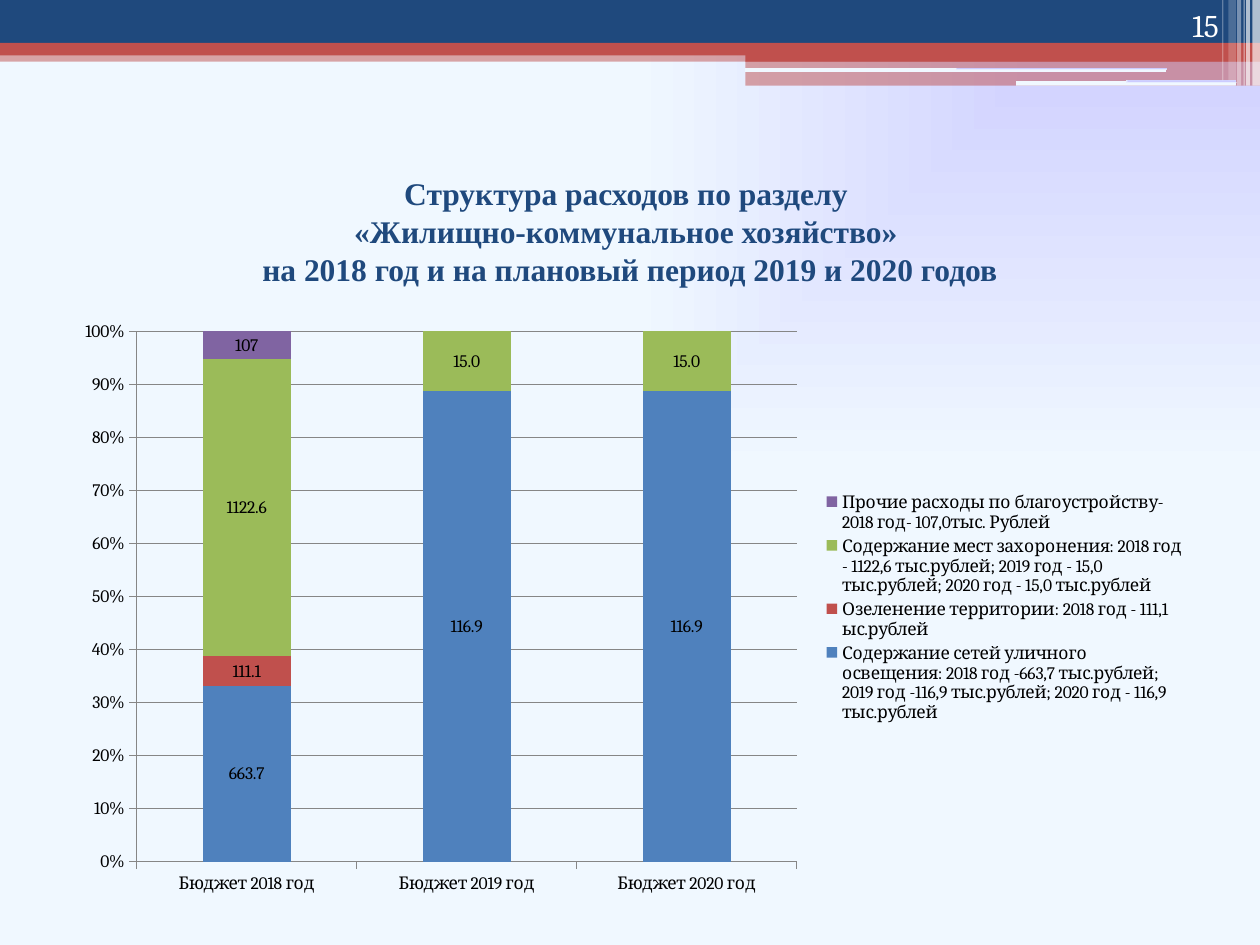
from lxml.etree import SubElement
from pptx import Presentation
from pptx.chart.data import CategoryChartData
from pptx.dml.color import RGBColor
from pptx.enum.chart import XL_CHART_TYPE, XL_LEGEND_POSITION, XL_TICK_MARK
from pptx.enum.shapes import MSO_SHAPE
from pptx.enum.text import MSO_ANCHOR, PP_ALIGN
from pptx.oxml import parse_xml
from pptx.oxml.ns import nsdecls, qn
from pptx.util import Pt

COLORS = {
    "navy": "1F497D", "red": "C0504D", "white": "FFFFFF", "black": "000000",
    "lilac": "CCCCFF", "ice": "F0F8FF", "grid": "868686",
    "blue": "4F81BD", "green": "9BBB59", "purple": "8064A2",
}


def color(name):
    return RGBColor.from_string(COLORS[name])


def place(part, x, y, width, height):
    """Pin a plot area or legend, in fractions of the chart."""
    element = part._element
    for old in element.findall(qn("c:layout")):
        element.remove(old)
    target = '<c:layoutTarget val="inner"/>' if element.tag == qn("c:plotArea") else ""
    layout = parse_xml(
        f'<c:layout {nsdecls("c")}><c:manualLayout>{target}'
        '<c:xMode val="edge"/><c:yMode val="edge"/>'
        f'<c:x val="{x}"/><c:y val="{y}"/><c:w val="{width}"/><c:h val="{height}"/>'
        '</c:manualLayout></c:layout>')
    position = element.find(qn("c:legendPos"))
    if position is None:
        element.insert(0, layout)
    else:
        position.addnext(layout)


class SlideBuilder:
    def __init__(self, page):
        self.page = page
        self.body_font = "Cambria"
        self.title_font = "Times New Roman"

    def gradient(self, fill, owner):
        """Fill with a gradient that spreads from the top right corner."""
        fill.gradient()
        for stop, name in zip(fill.gradient_stops, ("lilac", "ice")):
            stop.color.rgb = color(name)
        grad = next(owner.iter(qn("a:gradFill")))
        grad.remove(grad.find(qn("a:lin")))
        corner = SubElement(grad, qn("a:path"), {"path": "rect"})
        SubElement(corner, qn("a:fillToRect"), {"l": "100000", "b": "100000"})

    def background(self):
        self.gradient(self.page.background.fill, self.page._element)

    def shape(self, kind, left, top, width, height):
        shape = self.page.shapes.add_shape(kind, Pt(left), Pt(top), Pt(width), Pt(height))
        shape.shadow.inherit = False
        shape.line.fill.background()
        return shape

    def band(self, left, top, width, height, fill, opacity=100):
        shape = self.shape(MSO_SHAPE.RECTANGLE, left, top, width, height)
        shape.fill.solid()
        shape.fill.fore_color.rgb = color(fill)
        if opacity < 100:
            value = next(shape._element.spPr.iter(qn("a:srgbClr")))
            SubElement(value, qn("a:alpha"), {"val": str(opacity * 1000)})

    def slot(self, left, top, width, height):
        shape = self.shape(MSO_SHAPE.ROUNDED_RECTANGLE, left, top, width, height)
        self.gradient(shape.fill, shape._element.spPr)

    def text(self, left, top, width, height, words, align, anchor, fill, **font):
        box = self.page.shapes.add_textbox(Pt(left), Pt(top), Pt(width), Pt(height))
        frame = box.text_frame
        frame.word_wrap = True
        frame.vertical_anchor = anchor
        para = frame.paragraphs[0]
        para.text = words
        para.alignment = align
        for span in para.runs:
            for key, value in font.items():
                setattr(span.font, key, value)
            span.font.color.rgb = color(fill)

    def chart(self, left, top, width, height, categories, rows):
        data = CategoryChartData()
        data.categories = categories
        for name, values, _, number_format in rows:
            data.add_series(name, values, number_format)
        chart = self.page.shapes.add_chart(
            XL_CHART_TYPE.COLUMN_STACKED_100,
            Pt(left), Pt(top), Pt(width), Pt(height), data).chart
        chart.has_title = False
        for key, value in {"name": self.body_font, "size": Pt(10)}.items():
            setattr(chart.font, key, value)
        chart.font.color.rgb = color("black")

        # Columns and their labels
        plot = chart.plots[0]
        for key, value in {"gap_width": 150, "overlap": 100,
                           "vary_by_categories": False}.items():
            setattr(plot, key, value)
        for series, (_, _, fill, number_format) in zip(plot.series, rows):
            series.format.fill.solid()
            series.format.fill.fore_color.rgb = color(fill)
            labels = series.data_labels
            for key, value in {"show_value": True, "number_format": number_format,
                               "number_format_is_linked": False}.items():
                setattr(labels, key, value)

        # Axes
        for axis in (chart.category_axis, chart.value_axis):
            axis.major_tick_mark = XL_TICK_MARK.OUTSIDE
            axis.minor_tick_mark = XL_TICK_MARK.NONE
            axis.format.line.color.rgb = color("grid")
        scale = chart.value_axis
        scale.minimum_scale, scale.maximum_scale, scale.major_unit = 0, 1, 0.1
        scale.tick_labels.number_format = "0%"
        scale.tick_labels.number_format_is_linked = False
        scale.has_major_gridlines = True
        scale.major_gridlines.format.line.color.rgb = color("grid")

        # Legend
        chart.has_legend = True
        chart.legend.position = XL_LEGEND_POSITION.RIGHT
        chart.legend.include_in_layout = False
        place(chart.legend, 0.67, 0.3, 0.32, 0.4)
        plot_area = chart._chartSpace.chart.plotArea
        place(PlotArea(plot_area), 0.065, 0.036, 0.582, 0.89)


class PlotArea:
    def __init__(self, element):
        self._element = element


def main():
    deck = Presentation()
    deck.slide_width, deck.slide_height = Pt(720), Pt(540)
    builder = SlideBuilder(deck.slides.add_slide(deck.slide_layouts[6]))
    builder.background()

    # Header bands
    builder.band(0, 28.8, 720, 6.5, "red", 50)
    builder.band(0, 0, 720, 24.5, "navy")
    builder.band(0, 24.5, 720, 7.2, "red")
    builder.band(426, 28, 294, 7.2, "red")
    builder.band(426, 34.6, 294, 14.4, "red", 50)
    builder.slot(425.5, 38.9, 241, 2.2)
    builder.slot(580.3, 46.1, 126, 2.9)

    # Light stripes at the right edge
    for left, width, height, opacity in (
            (715.7, 4.3, 49, 65), (712.1, 2.2, 49, 65), (710.6, 0.7, 49, 60),
            (707, 2.2, 49, 40), (702, 4.3, 46, 20), (698.4, 0.7, 46, 30)):
        builder.band(left, 0, width, height, "white", opacity)

    # Title and page number
    builder.text(36, 90, 648, 84,
                 "Структура расходов по разделу \v«Жилищно-коммунальное хозяйство» \v"
                 "на 2018 год и на плановый период 2019 и 2020 годов",
                 PP_ALIGN.CENTER, MSO_ANCHOR.MIDDLE, "navy",
                 name=builder.title_font, size=Pt(18), bold=True)
    builder.text(643.7, 0, 59.8, 28.8, "15", PP_ALIGN.RIGHT, MSO_ANCHOR.BOTTOM,
                 "white", name=builder.body_font, size=Pt(18))

    # Budget structure
    builder.chart(36, 177, 648, 340.6, [f"Бюджет {year} год" for year in (2018, 2019, 2020)], [
        ("Содержание сетей уличного освещения: 2018 год -663,7 тыс.рублей; "
         "2019 год -116,9 тыс.рублей; 2020 год - 116,9 тыс.рублей",
         (663.7, 116.9, 116.9), "blue", "0.0"),
        ("Озеленение территории: 2018 год - 111,1 ыс.рублей",
         (111.1, None, None), "red", "General"),
        ("Содержание мест захоронения: 2018 год - 1122,6 тыс.рублей; "
         "2019 год - 15,0 тыс.рублей; 2020 год - 15,0 тыс.рублей",
         (1122.6, 15, 15), "green", "0.0"),
        ("Прочие расходы по благоустройству- 2018 год- 107,0тыс. Рублей",
         (107, None, None), "purple", "General"),
    ])
    deck.save("out.pptx")


if __name__ == "__main__":
    main()
